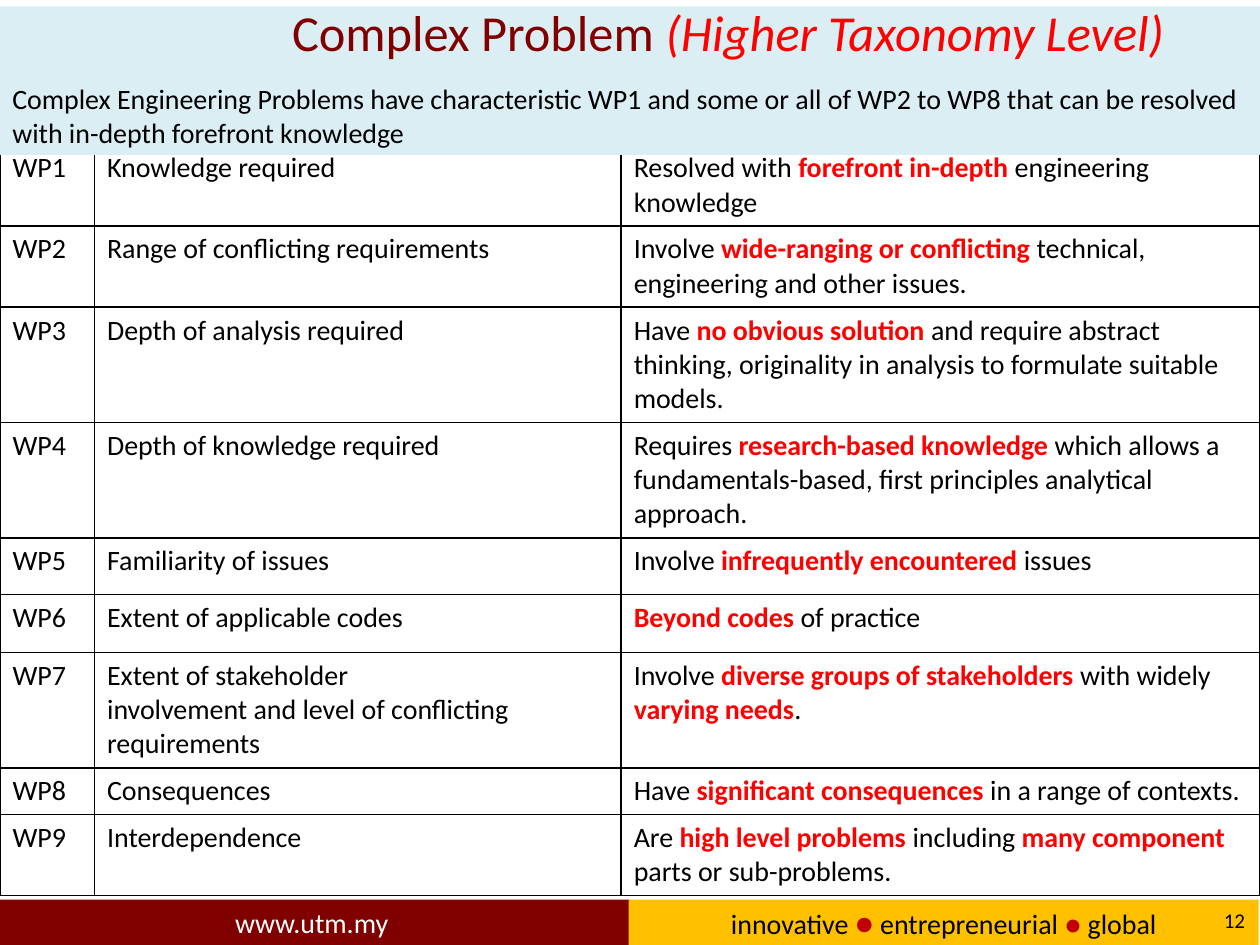
from dataclasses import dataclass

from lxml import etree
from pptx import Presentation
from pptx.dml.color import RGBColor
from pptx.enum.shapes import MSO_SHAPE
from pptx.enum.text import MSO_ANCHOR, MSO_AUTO_SIZE, PP_ALIGN
from pptx.oxml.ns import qn
from pptx.util import Inches, Pt

RECTANGLE = MSO_SHAPE.RECTANGLE
MIDDLE, BOTTOM = MSO_ANCHOR.MIDDLE, MSO_ANCHOR.BOTTOM
LEFT, CENTER, RIGHT = PP_ALIGN.LEFT, PP_ALIGN.CENTER, PP_ALIGN.RIGHT
NO_AUTOFIT = MSO_AUTO_SIZE.NONE


@dataclass(frozen=True)
class Theme:
    font: str = "Calibri"
    black: str = "000000"
    white: str = "FFFFFF"
    maroon: str = "800000"
    gold: str = "FFC000"
    dot: str = "C00000"
    red: str = "FF0000"
    pale_blue: str = "DBEEF4"
    title_size: float = 28.8
    dot_size: float = 18
    body_size: float = 16
    number_size: float = 12
    border_width: float = 1


THEME = Theme()
BODY = {"name": THEME.font, "size": THEME.body_size, "color": THEME.black, "bold": False}
KEY = BODY | {"color": THEME.red, "bold": True}
TITLE = BODY | {"size": THEME.title_size, "color": THEME.maroon}
TITLE_NOTE = TITLE | {"color": THEME.red, "italic": True}
FOOTER_LINK = BODY | {"color": THEME.white}
FOOTER_DOT = BODY | {"color": THEME.dot, "size": THEME.dot_size}
FOOTER_WORD = BODY | {"size": THEME.dot_size}
NUMBER = BODY | {"size": THEME.number_size}

INTRO = (
    "Complex Engineering Problems have characteristic WP1 and some or all of "
    "WP2 to WP8 that can be resolved with in-depth forefront knowledge"
)
COLUMN_WIDTHS = [0.75, 4.18, 5.07]
PROBLEM_ROWS = [
    (0.42, "Knowledge required",
     "Resolved with *forefront in-depth *engineering knowledge"),
    (0.55, "Range of conflicting requirements",
     "Involve *wide-ranging or conflicting *technical, engineering and other issues."),
    (0.55, "Depth of analysis required",
     "Have *no obvious solution *and require abstract thinking, "
     "originality in analysis to formulate suitable models."),
    (0.71, "Depth of knowledge required",
     "Requires *research-based knowledge* which allows a "
     "fundamentals-based, first principles analytical approach."),
    (0.45, "Familiarity of issues",
     "Involve *infrequently encountered* issues"),
    (0.46, "Extent of applicable codes",
     "*Beyond codes *of practice"),
    (0.79, "Extent of stakeholder\ninvolvement and level of conflicting requirements",
     "Involve *diverse groups of stakeholders *with widely *varying needs*."),
    (0.34, "Consequences",
     "Have *significant consequences* in a range of contexts."),
    (0.29, "Interdependence",
     "Are *high level problems *including *many component *parts or sub-problems."),
]


def format_font(font, values):
    for name, value in values.items():
        if name == "color":
            font.color.rgb = RGBColor.from_string(value)
        else:
            setattr(font, name, Pt(value) if name == "size" else value)


def write_spans(para, spans, align=LEFT):
    para.alignment = align
    for text, values in spans:
        span = para.add_run()
        span.text = text
        format_font(span.font, values)


def marked_spans(text):
    pieces = text.split("*")
    return [(piece, KEY if index % 2 else BODY) for index, piece in enumerate(pieces) if piece]


def set_frame(frame, anchor):
    for name, value in {"word_wrap": True, "auto_size": NO_AUTOFIT, "vertical_anchor": anchor}.items():
        setattr(frame, name, value)


def add_band(page, bounds, color, spans, align, anchor=MIDDLE):
    band = page.shapes.add_shape(RECTANGLE, *map(Inches, bounds))
    band.shadow.inherit = False
    band.fill.solid()
    band.fill.fore_color.rgb = RGBColor.from_string(color)
    band.line.fill.background()
    set_frame(band.text_frame, anchor)
    write_spans(band.text_frame.paragraphs[0], spans, align)


def add_page_number(page, bounds, number):
    box = page.shapes.add_textbox(*map(Inches, bounds))
    set_frame(box.text_frame, MIDDLE)
    write_spans(box.text_frame.paragraphs[0], [(number, NUMBER)], RIGHT)


def add_borders(cell):
    properties = cell._tc.get_or_add_tcPr()
    for side in ("a:lnL", "a:lnR", "a:lnT", "a:lnB"):
        line = etree.SubElement(properties, qn(side), w=str(Pt(THEME.border_width)))
        fill = etree.SubElement(line, qn("a:solidFill"))
        etree.SubElement(fill, qn("a:srgbClr"), val=THEME.black)


def fill_cell(cell, text):
    add_borders(cell)
    cell.fill.background()
    frame = cell.text_frame
    for index, line in enumerate(text.split("\n")):
        para = frame.add_paragraph() if index else frame.paragraphs[0]
        write_spans(para, marked_spans(line))


def add_problem_table(page, left, top):
    heights = [row[0] for row in PROBLEM_ROWS]
    bounds = (left, top, sum(COLUMN_WIDTHS), sum(heights))
    table = page.shapes.add_table(len(heights), len(COLUMN_WIDTHS), *map(Inches, bounds)).table
    table.first_row = table.horz_banding = False
    for column, width in zip(table.columns, COLUMN_WIDTHS):
        column.width = Inches(width)
    for index, (height, topic, meaning) in enumerate(PROBLEM_ROWS):
        table.rows[index].height = Inches(height)
        for cell, text in zip(table.rows[index].cells, (f"WP{index + 1}", topic, meaning)):
            fill_cell(cell, text)


def place_title(page, bounds, spans):
    title = page.shapes.title
    for name, value in zip(("left", "top", "width", "height"), bounds):
        setattr(title, name, Inches(value))
    set_frame(title.text_frame, MIDDLE)
    write_spans(title.text_frame.paragraphs[0], spans, RIGHT)
    page.shapes._spTree.append(title._element)


def main():
    deck = Presentation()
    deck.slide_width, deck.slide_height = Inches(10), Inches(7.5)
    page = deck.slides.add_slide(deck.slide_layouts[5])
    add_band(page, (0, 7.14, 5, 0.36), THEME.maroon, [("www.utm.my ", FOOTER_LINK)], CENTER)
    motto = [
        ("innovative ", BODY),
        ("●", FOOTER_DOT),
        (" entrepreneurial ", BODY),
        ("● ", FOOTER_DOT | {"size": THEME.body_size}),
        ("global", BODY),
    ]
    add_band(page, (4.99, 7.14, 5, 0.36), THEME.gold, motto, CENTER)
    add_page_number(page, (9.33, 7.1, 0.65, 0.4), "12")
    add_problem_table(page, 0, 1.15)
    add_band(page, (0, 0.05, 10, 1.18), THEME.pale_blue, [(INTRO, BODY)], LEFT, BOTTOM)
    heading = [("Complex Problem ", TITLE), ("(Higher Taxonomy Level)", TITLE_NOTE)]
    place_title(page, (1.93, -0.11, 7.41, 0.71), heading)
    deck.save("out.pptx")


if __name__ == "__main__":
    main()
